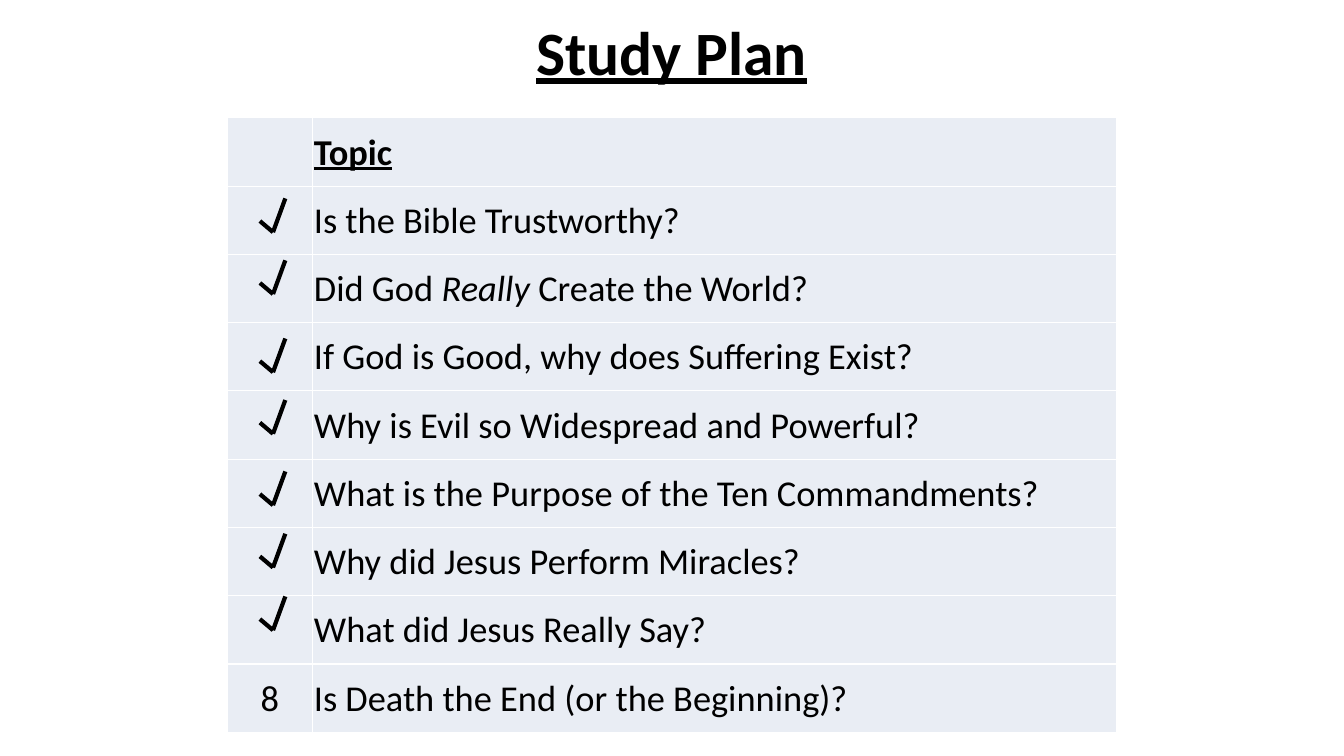
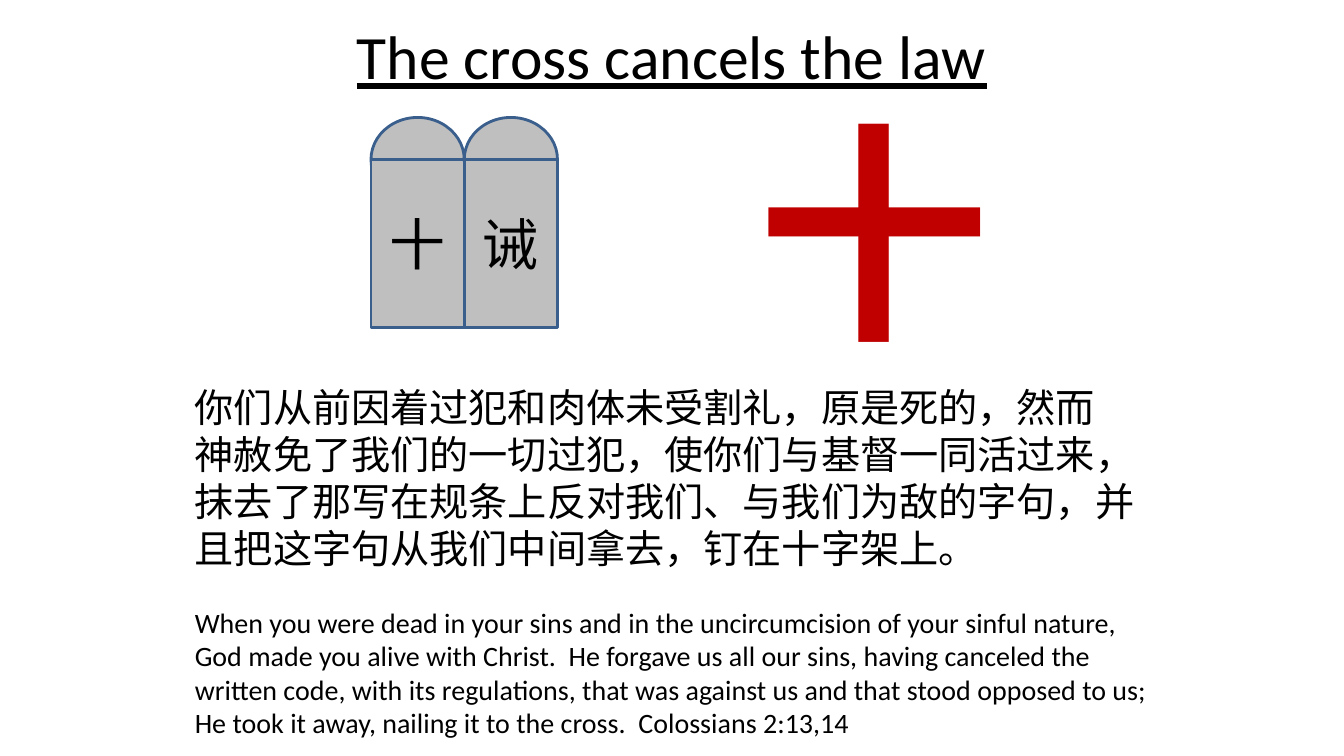
from dataclasses import dataclass

from lxml import etree
from pptx import Presentation
from pptx.dml.color import RGBColor
from pptx.enum.shapes import MSO_CONNECTOR, MSO_SHAPE
from pptx.enum.text import MSO_ANCHOR, PP_ALIGN
from pptx.oxml.ns import qn
from pptx.util import Cm, Pt

LEFT, CENTER = PP_ALIGN.LEFT, PP_ALIGN.CENTER
MIDDLE = MSO_ANCHOR.MIDDLE
OVAL, RECTANGLE = MSO_SHAPE.OVAL, MSO_SHAPE.RECTANGLE
STRAIGHT = MSO_CONNECTOR.STRAIGHT
TITLE_ONLY = 5

TOPICS = [
    ("Is the Bible Trustworthy?",),
    ("Did God ", "Really ", "Create the World?"),
    ("If God is Good, why does Suffering Exist?",),
    ("Why is Evil so Widespread and Powerful?",),
    ("What is the Purpose of the Ten Commandments?",),
    ("Why did Jesus Perform Miracles?",),
    ("What did Jesus Really Say?",),
    ("Is Death the End (or the Beginning)?",),
]
TICK_TOPS = [5, 6.56, 8.53, 10.08, 11.88, 13.45, 15.03]
VERSE_CHINESE = (
    "你们从前因着过犯和肉体未受割礼，原是死的，然而　神赦免了我们的一切过犯，"
    "使你们与基督一同活过来， 抹去了那写在规条上反对我们、与我们为敌的字句，"
    "并且把这字句从我们中间拿去，钉在十字架上。"
)
VERSE_ENGLISH = (
    "When you were dead in your sins and in the uncircumcision of your sinful "
    "nature, God made you alive with Christ.  He forgave us all our sins, having "
    "canceled the written code, with its regulations, that was against us and that "
    "stood opposed to us; He took it away, nailing it to the cross.  "
    "Colossians 2:13,14"
)


@dataclass(frozen=True)
class Theme:
    """Colours, font and type sizes of the presentation."""
    font: str = "Calibri"
    ink: str = "000000"
    cell: str = "E9EDF4"
    border: str = "FFFFFF"
    stone: str = "BFBFBF"
    stone_edge: str = "3A5F8C"
    cross: str = "C00000"
    title: int = 44
    topic: int = 26
    tablet: int = 40
    cross_size: int = 166
    chinese: int = 28
    english: int = 20


class Deck:
    """Holds the style and the slide being built."""

    def __init__(self, theme):
        """Start an empty widescreen presentation."""
        self.theme = theme
        self.presentation = Presentation()
        self.presentation.slide_width = Cm(33.87)
        self.presentation.slide_height = Cm(19.05)
        self.slide = None

    def add_text(self, paragraph, parts, size, color=None, bold=False,
                 underline=False, align=LEFT):
        """Fill a paragraph with parts, every second one italic."""
        paragraph.alignment = align
        for index, part in enumerate(parts):
            run = paragraph.add_run()
            run.text = part
            font = run.font
            font.name, font.size = self.theme.font, Pt(size)
            font.bold, font.underline = bold, underline
            font.italic = index % 2 == 1
            font.color.rgb = RGBColor.from_string(color or self.theme.ink)

    def add_slide(self, heading, left, top, width, height, bold=False):
        """Open a new slide with its underlined title."""
        layout = self.presentation.slide_layouts[TITLE_ONLY]
        self.slide = self.presentation.slides.add_slide(layout)
        title = self.slide.shapes.title
        title.left, title.top = Cm(left), Cm(top)
        title.width, title.height = Cm(width), Cm(height)
        title.text_frame.vertical_anchor = MIDDLE
        self.add_text(title.text_frame.paragraphs[0], [heading], self.theme.title,
                      bold=bold, underline=True, align=CENTER)

    def format_cell(self, cell):
        """Give a cell its fill, tight margins and thin borders."""
        cell.vertical_anchor = MIDDLE
        cell.margin_left = cell.margin_right = cell.margin_top = Cm(0.03)
        cell.margin_bottom = 0
        properties = cell._tc.get_or_add_tcPr()
        for side in ("a:lnL", "a:lnR", "a:lnT", "a:lnB"):
            edge = etree.SubElement(properties, qn(side), w=str(Pt(1)))
            paint = etree.SubElement(edge, qn("a:solidFill"))
            etree.SubElement(paint, qn("a:srgbClr"), val=self.theme.border)
        cell.fill.solid()
        cell.fill.fore_color.rgb = RGBColor.from_string(self.theme.cell)

    def topic_table(self, topics, done, left, top, widths, row_height):
        """Draw the topic list, numbering the topics not yet done."""
        rows = len(topics) + 1
        table = self.slide.shapes.add_table(
            rows, len(widths), Cm(left), Cm(top),
            Cm(sum(widths)), Cm(rows * row_height)).table
        table.first_row = table.horz_banding = False
        for column, width in zip(table.columns, widths):
            column.width = Cm(width)
        for row in table.rows:
            row.height = Cm(row_height)
        for cell in table.iter_cells():
            self.format_cell(cell)
        size = self.theme.topic
        self.add_text(table.cell(0, 1).text_frame.paragraphs[0], ["Topic"], size,
                      bold=True, underline=True)
        for number, topic in enumerate(topics, 1):
            self.add_text(table.cell(number, 1).text_frame.paragraphs[0], topic, size)
            if number > done:
                self.add_text(table.cell(number, 0).text_frame.paragraphs[0],
                              [str(number)], size, align=CENTER)

    def tick(self, left, top):
        """Draw a check mark from two grouped lines."""
        points = [(left, top + 0.57), (left + 0.33, top + 0.85), (left + 0.64, top)]
        mark = self.slide.shapes.add_group_shape()
        for start, end in zip(points, points[1:]):
            stroke = mark.shapes.add_connector(
                STRAIGHT, *(Cm(value) for value in start + end))
            stroke.line.width = Pt(3)
            stroke.line.color.rgb = RGBColor.from_string(self.theme.ink)
            etree.SubElement(stroke._element.spPr, qn("a:effectLst"))

    def tablets(self, letters, left, top, width):
        """Draw round-topped stone tablets side by side, one per letter."""
        stones = self.slide.shapes.add_group_shape()
        for index, letter in enumerate(letters):
            for outline, offset, height, label in (
                    (OVAL, 0, 2.12, ""), (RECTANGLE, 1.06, 4.23, letter)):
                stone = stones.shapes.add_shape(
                    outline, Cm(left + index * width), Cm(top + offset),
                    Cm(width), Cm(height))
                stone.shadow.inherit = False
                stone.fill.solid()
                stone.fill.fore_color.rgb = RGBColor.from_string(self.theme.stone)
                stone.line.color.rgb = RGBColor.from_string(self.theme.stone_edge)
                stone.line.width = Pt(2)
                if label:
                    stone.text_frame.vertical_anchor = MIDDLE
                    self.add_text(stone.text_frame.paragraphs[0], [label],
                                  self.theme.tablet, align=CENTER)

    def text_frame(self, left, top, width, height):
        """Add a wrapping text box and return its frame."""
        frame = self.slide.shapes.add_textbox(
            Cm(left), Cm(top), Cm(width), Cm(height)).text_frame
        frame.word_wrap = True
        return frame

    def cross(self, left, top, width, height):
        """Add the large red cross character."""
        frame = self.text_frame(left, top, width, height)
        self.add_text(frame.paragraphs[0], ["十"], self.theme.cross_size,
                      color=self.theme.cross, bold=True, align=CENTER)

    def verse(self, chinese, english, left, top, width, height):
        """Add a verse in Chinese and below it in English."""
        frame = self.text_frame(left, top, width, height)
        self.add_text(frame.paragraphs[0], [chinese], self.theme.chinese)
        translation = frame.add_paragraph()
        translation.space_before = Pt(24)
        self.add_text(translation, [english], self.theme.english)


def main():
    """Build both slides and save them."""
    deck = Deck(Theme())

    deck.add_slide("Study Plan", 11.22, 0, 11.43, 2.54, bold=True)
    deck.topic_table(TOPICS, len(TICK_TOPS), 5.72, 2.97, (2.16, 20.27), 1.72)
    for top in TICK_TOPS:
        deck.tick(6.55, top)

    deck.add_slide("The cross cancels the law", 5.5, -0.2, 22.86, 3.18)
    deck.tablets("十诫", 9.35, 2.96, 2.35)
    deck.cross(18.84, 2.12, 6.35, 7.34)
    deck.verse(VERSE_CHINESE, VERSE_ENGLISH, 4.66, 9.53, 24.55, 9.31)

    deck.presentation.save("out.pptx")


if __name__ == "__main__":
    main()
